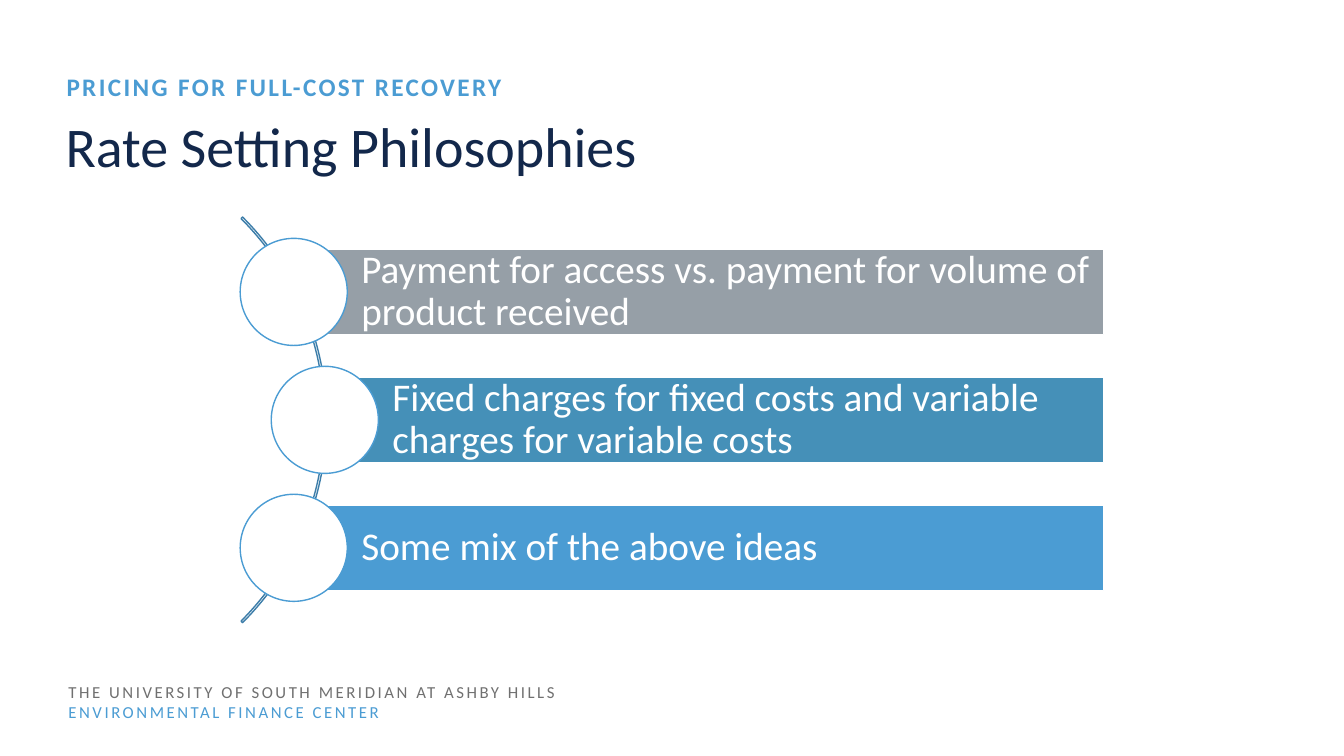
from lxml import etree
from pptx import Presentation
from pptx.dml.color import RGBColor
from pptx.enum.shapes import MSO_SHAPE
from pptx.enum.text import MSO_ANCHOR, MSO_AUTO_SIZE, PP_ALIGN
from pptx.oxml.ns import qn
from pptx.util import Pt

WHITE = RGBColor(0xFF, 0xFF, 0xFF)
NAVY = RGBColor(0x13, 0x28, 0x4B)
SKY = RGBColor(0x4B, 0x9C, 0xD3)
TEAL = RGBColor(0x45, 0x90, 0xB8)
SILVER = RGBColor(0x96, 0x9F, 0xA7)
GRAY = RGBColor(0x70, 0x70, 0x70)
ARC_BLUE = RGBColor(0x3C, 0x7D, 0xA9)


def write(paragraph, text, size, color, bold=False, tracking=0):
    paragraph.alignment = PP_ALIGN.LEFT
    run = paragraph.add_run()
    run.text = text
    for name, value in {"name": "Calibri", "size": Pt(size), "bold": bold}.items():
        setattr(run.font, name, value)
    run.font.color.rgb = color
    if tracking:
        run.font._element.set("spc", str(int(tracking * 100)))


def add_outlined(kind, left, top, width, height, line_color, fill=None):
    shape = slide.shapes.add_shape(kind, Pt(left), Pt(top), Pt(width), Pt(height))
    shape.shadow.inherit = False
    shape.line.color.rgb = line_color
    shape.line.width = Pt(1)
    if fill is None:
        shape.fill.background()
    else:
        shape.fill.solid()
        shape.fill.fore_color.rgb = fill
    return shape


prs = Presentation()
prs.slide_width, prs.slide_height = Pt(960), Pt(540)
slide = prs.slides.add_slide(prs.slide_layouts[1])

# Title and kicker
title, kicker = slide.shapes.title, slide.placeholders[1]
for heading, left, top, height in ((title, 39.6, 76.3, 56.9), (kicker, 40.3, 49.7, 19.4)):
    box = {"left": Pt(left), "top": Pt(top), "width": Pt(881.3), "height": Pt(height)}
    for name, value in box.items():
        setattr(heading, name, value)
    frame = {"vertical_anchor": MSO_ANCHOR.TOP, "auto_size": MSO_AUTO_SIZE.NONE,
             "word_wrap": True}
    for name, value in frame.items():
        setattr(heading.text_frame, name, value)

write(title.text_frame.paragraphs[0], "Rate Setting Philosophies", 40, NAVY)
kicker_line = kicker.text_frame.paragraphs[0]
write(kicker_line, "PRICING FOR FULL-COST RECOVERY", 18, SKY, bold=True, tracking=1.7)
kicker_line.line_spacing = 0.9
kicker_line.space_before = Pt(0)
kicker_format = kicker_line._p.get_or_add_pPr()
kicker_format.set("marL", "0")
kicker_format.set("indent", "0")
etree.SubElement(kicker_format, qn("a:buNone"))

# Footer credit
footer = slide.shapes.add_textbox(Pt(41.8), Pt(483.1), Pt(563.8), Pt(36)).text_frame
footer.word_wrap = True
footer.vertical_anchor = MSO_ANCHOR.MIDDLE
write(footer.paragraphs[0], "THE UNIVERSITY OF SOUTH MERIDIAN AT ASHBY HILLS", 12, GRAY,
      tracking=1.8)
write(footer.add_paragraph(), "ENVIRONMENTAL FINANCE CENTER", 12, SKY, tracking=1.8)

# Arc behind the philosophies
MIDDLE_Y, ARC_SIZE = 299.9, 409.7
arc = add_outlined(MSO_SHAPE.BLOCK_ARC, -176.4, MIDDLE_Y - ARC_SIZE / 2,
                   ARC_SIZE, ARC_SIZE, ARC_BLUE)
for index, value in enumerate((189, 27, 0.0038)):
    arc.adjustments[index] = value

# Philosophy bars, each starting at the centre of its circle
BAR_RIGHT, BAR_HEIGHT, PITCH, CIRCLE = 788.4, 61, 91.4, 76.5
philosophies = (
    ("Payment for access vs. payment for volume of product received", 209.8, SILVER),
    ("Fixed charges for fixed costs and variable charges for variable costs", 232, TEAL),
    ("Some mix of the above ideas", 209.8, SKY),
)
for row, (philosophy, left, color) in enumerate(philosophies):
    center_y = MIDDLE_Y + (row - 1) * PITCH
    bar = add_outlined(MSO_SHAPE.RECTANGLE, left, center_y - BAR_HEIGHT / 2,
                       BAR_RIGHT - left, BAR_HEIGHT, WHITE, color)
    frame = {"margin_left": Pt(48.3), "margin_right": Pt(5.6), "margin_top": Pt(5.6),
             "margin_bottom": Pt(5.6), "vertical_anchor": MSO_ANCHOR.MIDDLE,
             "word_wrap": True}
    for name, value in frame.items():
        setattr(bar.text_frame, name, value)
    write(bar.text_frame.paragraphs[0], philosophy, 28, WHITE)
    bar.text_frame.paragraphs[0].line_spacing = 0.9
    add_outlined(MSO_SHAPE.OVAL, left - CIRCLE / 2, center_y - CIRCLE / 2,
                 CIRCLE, CIRCLE, SKY, WHITE)

prs.save("out.pptx")
